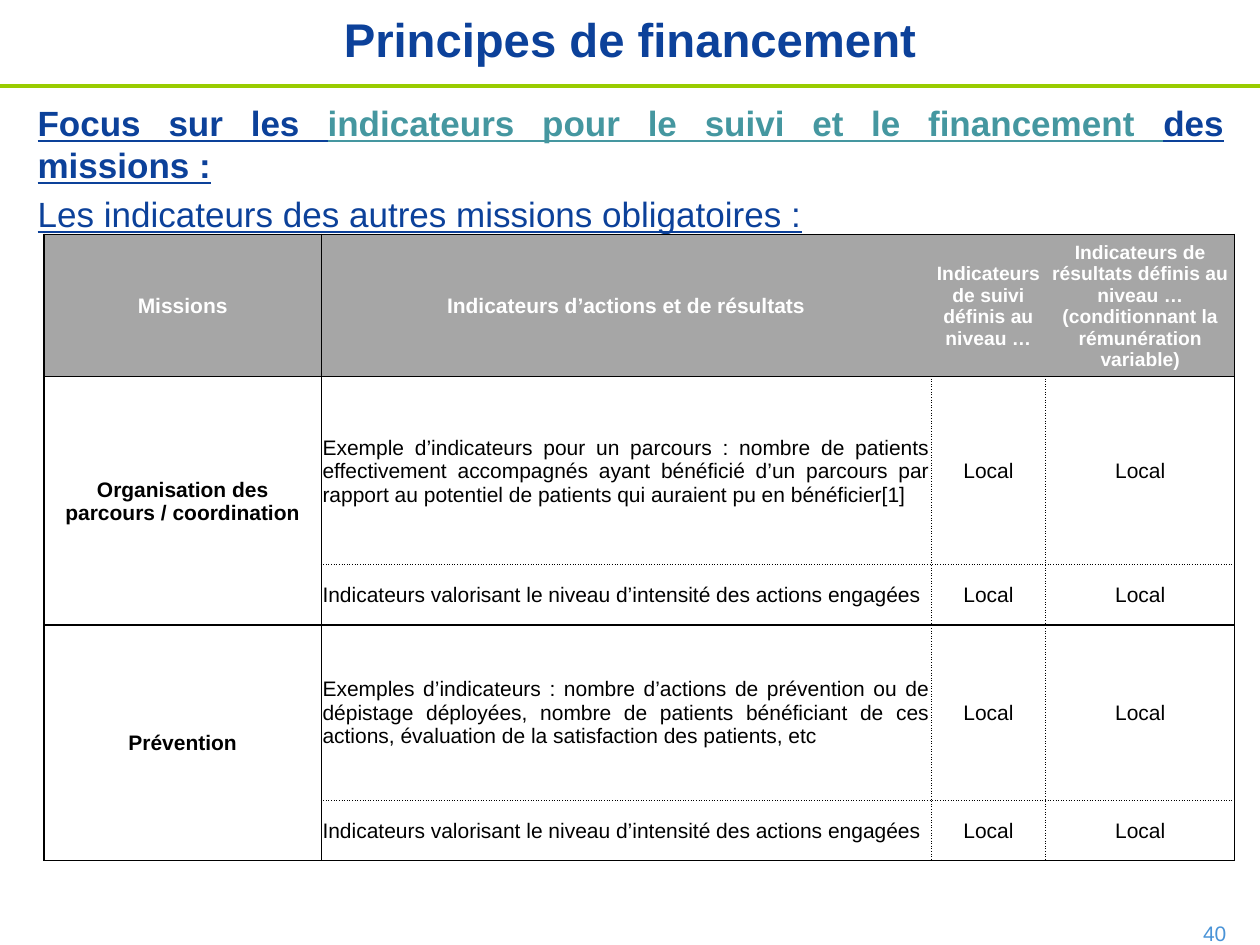
from lxml import etree
from pptx import Presentation
from pptx.dml.color import RGBColor
from pptx.enum import shapes, text
from pptx.oxml import ns
from pptx.util import Inches, Pt

NAVY = RGBColor(0x0C, 0x41, 0x9A)
TEAL = RGBColor(0x45, 0x97, 0xA0)
SKY = RGBColor(0x49, 0x93, 0xD7)
LIME = RGBColor(0x99, 0xCC, 0x00)
GREY = RGBColor(0xA6, 0xA6, 0xA6)
WHITE = RGBColor(0xFF, 0xFF, 0xFF)
BLACK = RGBColor(0x00, 0x00, 0x00)

SOLID = (1, "solid")
DOTTED = (0.5, "sysDot")
CENTER = text.PP_ALIGN.CENTER
JUSTIFY = text.PP_ALIGN.JUSTIFY


def style(span, size, color, bold=False, underline=False):
    font = span.font
    font.name = "Arial"
    font.size = Pt(size)
    font.color.rgb = color
    font.bold = bold
    font.underline = underline


def add_border(cell, side, kind):
    """Draw one cell edge (L, R, T or B); kind None leaves it invisible."""
    properties = cell._tc.get_or_add_tcPr()
    edge = etree.SubElement(properties, ns.qn(f"a:ln{side}"))
    if kind is None:
        etree.SubElement(edge, ns.qn("a:noFill"))
        return
    width, dash = kind
    edge.set("w", str(Pt(width)))
    fill = etree.SubElement(edge, ns.qn("a:solidFill"))
    etree.SubElement(fill, ns.qn("a:srgbClr"), val=str(BLACK))
    etree.SubElement(edge, ns.qn("a:prstDash"), val=dash)


deck = Presentation()
deck.slide_width = Inches(10)
deck.slide_height = Inches(7.5)
page = deck.slides.add_slide(deck.slide_layouts[5])

# Title and rule
rule = page.shapes.add_connector(
    shapes.MSO_CONNECTOR.STRAIGHT, 0, Inches(0.68), Inches(10), Inches(0.68))
rule.line.color.rgb = LIME
rule.line.width = Pt(2.25)
etree.SubElement(rule._element.spPr, ns.qn("a:effectLst"))

title = page.shapes.title
title.left, title.top = 0, 0
title.width, title.height = Inches(10), Inches(0.61)
title.text_frame.text = "Principes de financement"
title.text_frame.vertical_anchor = text.MSO_ANCHOR.MIDDLE
title.text_frame.paragraphs[0].alignment = CENTER
style(title.text_frame.paragraphs[0].runs[0], 27, NAVY, bold=True)

# Introduction
intro = page.shapes.add_textbox(Inches(0.2), Inches(0.76), Inches(9.61), Inches(1.1))
intro.text_frame.word_wrap = True
focus = intro.text_frame.paragraphs[0]
for words, color in [
    ("Focus sur les ", NAVY),
    ("indicateurs pour le suivi et le financement ", TEAL),
    ("des missions :", NAVY),
]:
    span = focus.add_run()
    span.text = words
    style(span, 20, color, bold=True, underline=True)
subject = intro.text_frame.add_paragraph()
subject.text = "Les indicateurs des autres missions obligatoires :"
subject.space_before = Pt(4)
style(subject.runs[0], 20, NAVY, underline=True)
for para in intro.text_frame.paragraphs:
    para.alignment = JUSTIFY

# Table of indicators
INTENSITY = "Indicateurs valorisant le niveau d’intensité des actions engagées"
ROWS = [
    ["Missions", "Indicateurs d’actions et de résultats",
     "Indicateurs de suivi définis au niveau …",
     "Indicateurs de résultats définis au niveau …"
     "(conditionnant la rémunération variable)"],
    ["Organisation des parcours / coordination",
     "Exemple d’indicateurs pour un parcours : nombre de patients effectivement "
     "accompagnés ayant bénéficié d’un parcours par rapport au potentiel de "
     "patients qui auraient pu en bénéficier[1]", "Local", "Local"],
    ["", INTENSITY, "Local", "Local"],
    ["Prévention",
     "Exemples d’indicateurs : nombre d’actions de prévention ou de dépistage "
     "déployées, nombre de patients bénéficiant de ces actions, évaluation de la "
     "satisfaction des patients, etc", "Local", "Local"],
    ["", INTENSITY, "Local", "Local"],
]
WIDTHS = [2.2, 4.84, 0.91, 1.5]
HEIGHTS = [1.13, 1.49, 0.48, 1.39, 0.48]

table = page.shapes.add_table(
    len(ROWS), len(WIDTHS), Inches(0.35), Inches(1.86),
    Inches(sum(WIDTHS)), Inches(sum(HEIGHTS))).table
table.first_row = False
table.horz_banding = False
for column, width in zip(table.columns, WIDTHS):
    column.width = Inches(width)
for row, height in zip(table.rows, HEIGHTS):
    row.height = Inches(height)
for first in (1, 3):
    table.cell(first, 0).merge(table.cell(first + 1, 0))

for r, row in enumerate(ROWS):
    header = r == 0
    inner = None if header else DOTTED
    for c, words in enumerate(row):
        cell = table.cell(r, c)
        cell.margin_left = cell.margin_right = cell.margin_top = Inches(0.01)
        cell.margin_bottom = 0
        cell.vertical_anchor = text.MSO_ANCHOR.MIDDLE

        # Dotted lines split the two rows of a mission and its last columns
        add_border(cell, "L", SOLID if c <= 1 else inner)
        add_border(cell, "R", SOLID if c in (0, 3) else inner)
        add_border(cell, "T", DOTTED if c and r in (2, 4) else SOLID)
        add_border(cell, "B", DOTTED if c and r in (1, 3) else SOLID)
        if header:
            cell.fill.solid()
            cell.fill.fore_color.rgb = GREY
        else:
            cell.fill.background()

        if cell.is_spanned:
            continue
        cell.text_frame.text = words
        para = cell.text_frame.paragraphs[0]
        para.alignment = JUSTIFY if c == 1 and not header else CENTER
        style(para.runs[0], 11 if header and c >= 2 else 12,
              WHITE if header else BLACK, bold=header or c == 0)

# Page number
number = page.shapes.add_textbox(Inches(9.45), Inches(7.26), Inches(0.55), Inches(0.24))
number.text_frame.text = "40"
style(number.text_frame.paragraphs[0].runs[0], 12, SKY)

deck.save("out.pptx")
